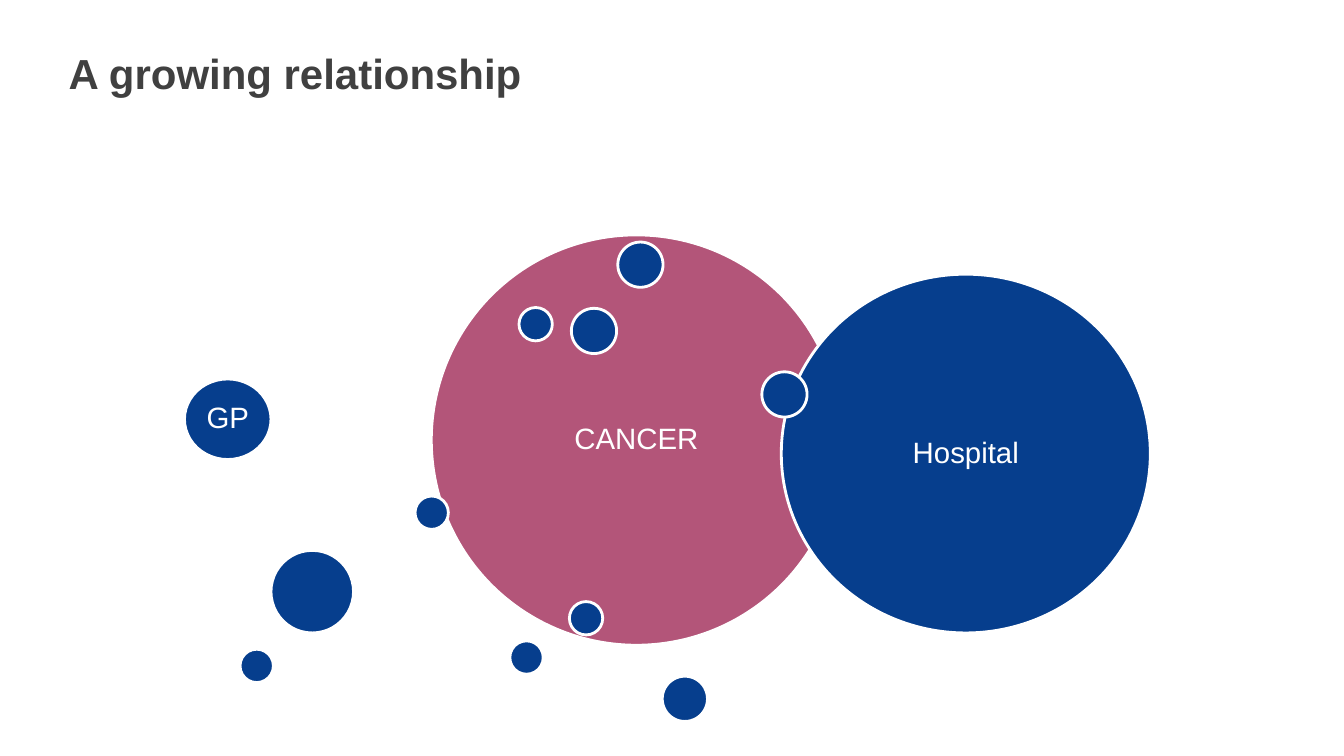
from pptx import Presentation
from pptx.dml.color import RGBColor
from pptx.enum.shapes import MSO_SHAPE
from pptx.enum.text import MSO_ANCHOR, PP_ALIGN
from pptx.util import Cm, Pt

OVAL = MSO_SHAPE.OVAL
MIDDLE, TOP = MSO_ANCHOR.MIDDLE, MSO_ANCHOR.TOP
CENTER, LEFT = PP_ALIGN.CENTER, PP_ALIGN.LEFT

TITLE = "A growing relationship"
TITLE_BOX = (1.73, 1.19, 30.4, 1.3)
SMALL, MEDIUM, LARGE = (0.84, 0.84), (1.14, 1.14), (2.08, 2.08)

BUBBLES = [
    ("CANCER", "rose", (10.87, 5.92), (10.34, 10.34)),
    ("", "blue", (15.57, 6.1), MEDIUM),
    ("", "blue", (12.85, 16.15), SMALL),
    ("", "blue", (16.69, 17.04), MEDIUM),
    ("", "blue", (13.08, 7.75), SMALL),
    ("", "blue", (10.46, 12.5), SMALL),
    ("GP", "blue", (4.65, 9.55), (2.18, 2.03)),
    ("", "blue", (14.4, 7.77), MEDIUM),
    ("", "blue", (6.83, 13.87), LARGE),
    ("Hospital", "blue", (19.69, 6.91), (9.3, 9.04)),
    ("", "blue", (19.2, 9.37), MEDIUM),
    ("", "blue", (6.05, 16.36), SMALL),
    ("", "blue", (14.35, 15.16), SMALL),
]

THEME = {
    "font": "Arial",
    "title_size": Pt(30),
    "label_size": Pt(21),
    "outline": Pt(2),
    "title": RGBColor.from_string("404040"),
    "white": RGBColor.from_string("FFFFFF"),
    "rose": RGBColor.from_string("B35579"),
    "blue": RGBColor.from_string("063E8D"),
}


def write(sp, text, size, color, align, anchor, bold=False):
    tf = sp.text_frame
    tf.text = text
    tf.word_wrap = True
    tf.vertical_anchor = anchor
    tf.margin_left = tf.margin_right = tf.margin_top = tf.margin_bottom = 0
    p = tf.paragraphs[0]
    p.alignment = align
    font = p.runs[0].font
    font.name, font.size, font.bold = THEME["font"], THEME[size], bold
    font.color.rgb = THEME[color]
    return p


def add_bubble(s, label, color, corner, size):
    sp = s.shapes.add_shape(OVAL, *map(Cm, corner + size))
    sp.shadow.inherit = False
    sp.fill.solid()
    sp.fill.fore_color.rgb = THEME[color]
    sp.line.color.rgb = THEME["white"]
    sp.line.width = THEME["outline"]
    if label:
        p = write(sp, label, "label_size", "white", CENTER, MIDDLE)
        p.line_spacing = 0.9


def main():
    prs = Presentation()
    prs.slide_width, prs.slide_height = Cm(33.87), Cm(19.05)
    s = prs.slides.add_slide(prs.slide_layouts[6])
    title = s.shapes.add_textbox(*map(Cm, TITLE_BOX))
    write(title, TITLE, "title_size", "title", LEFT, TOP, bold=True)
    for bubble in BUBBLES:
        add_bubble(s, *bubble)
    prs.save("out.pptx")


if __name__ == "__main__":
    main()
